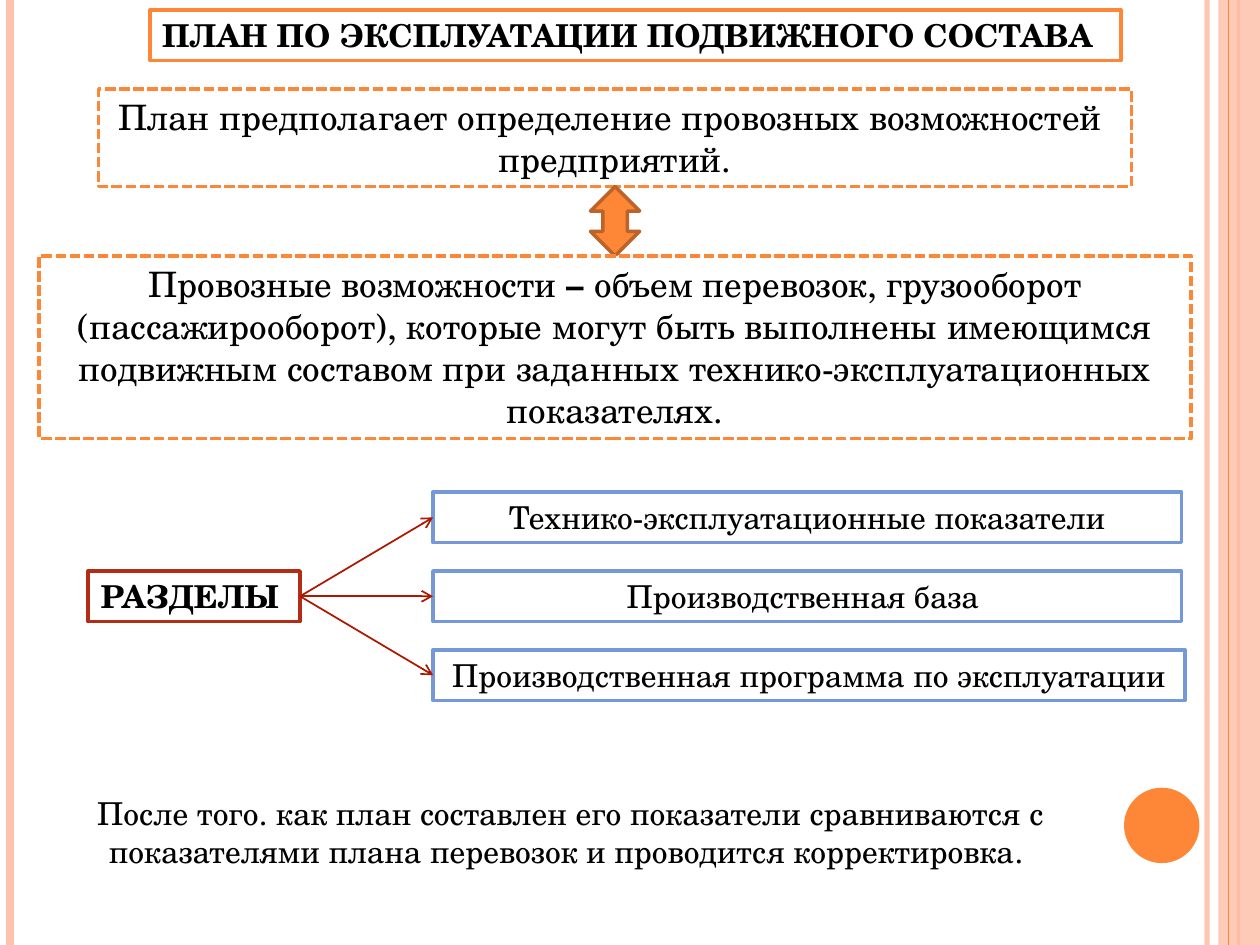
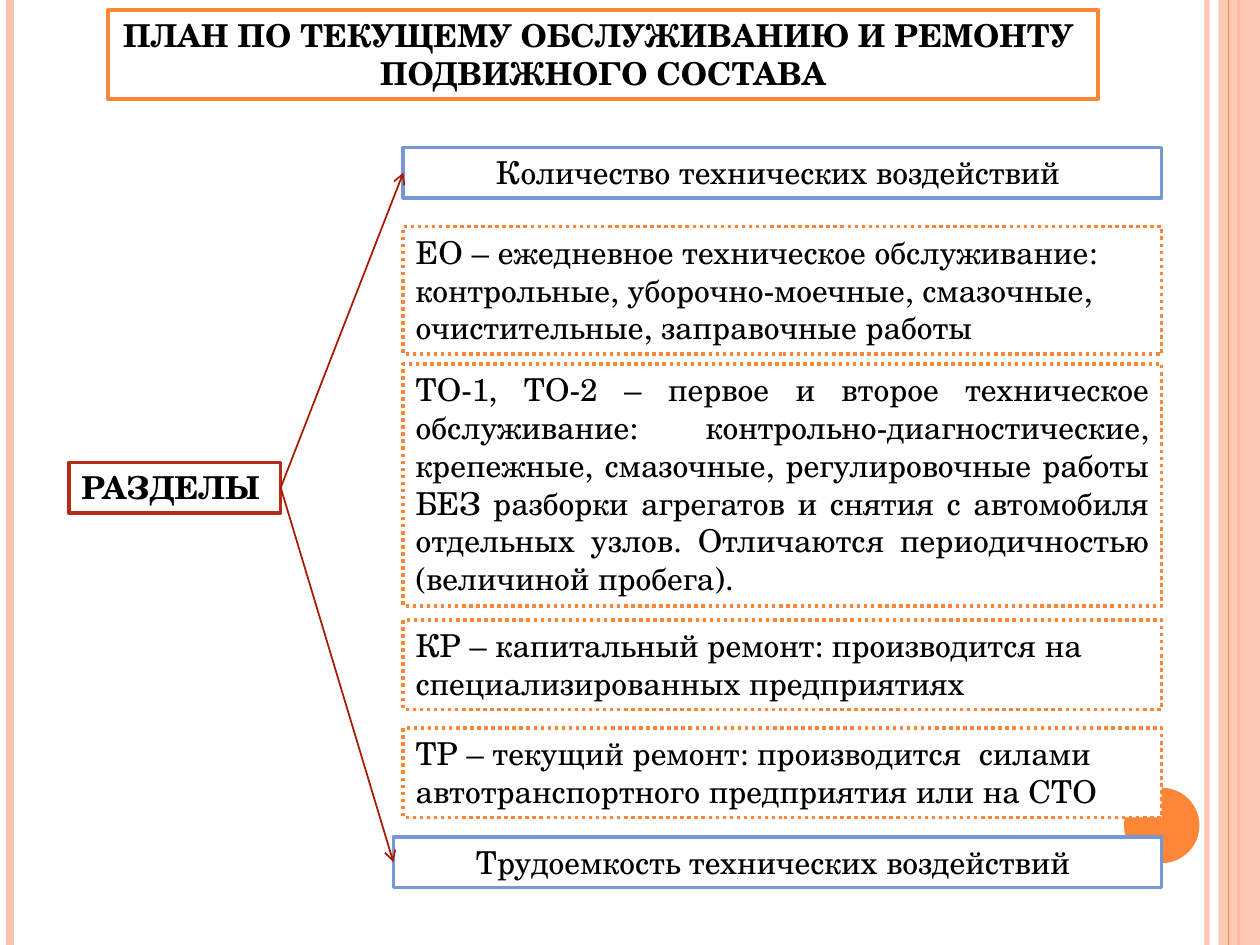
from collections import namedtuple

from lxml.etree import SubElement
from pptx import Presentation
from pptx.dml.color import RGBColor
from pptx.enum.dml import MSO_LINE
from pptx.enum.shapes import MSO_CONNECTOR, MSO_SHAPE
from pptx.enum.text import MSO_ANCHOR, PP_ALIGN
from pptx.oxml.ns import qn
from pptx.util import Cm, Pt

WHITE = RGBColor(0xFF, 0xFF, 0xFF)
BLACK = RGBColor(0x00, 0x00, 0x00)
ORANGE = RGBColor(0xFE, 0x86, 0x37)
BROWN = RGBColor(0xBC, 0x63, 0x29)
PINK = RGBColor(0xFE, 0xC3, 0xAE)
RED = RGBColor(0xB3, 0x2C, 0x16)
ARROW_RED = RGBColor(0xAC, 0x18, 0x00)
BLUE = RGBColor(0x75, 0x98, 0xD9)

FONT = "TeX Gyre Schola"
PAGE_WIDTH, PAGE_HEIGHT = 25.4, 19.05
ROW_HEIGHT = 1.02
LABEL_WIDTH = 4.27

Box = namedtuple("Box", "left top width height")


def set_opacity(properties, percent):
    color = next(properties.iter(qn("a:srgbClr")))
    SubElement(color, qn("a:alpha")).set("val", str(percent * 1000))


def write_text(frame, text, size=18, bold=False, align=PP_ALIGN.LEFT):
    frame.word_wrap = True
    frame.vertical_anchor = MSO_ANCHOR.TOP
    for index, line in enumerate(text.split("\n")):
        para = frame.paragraphs[0] if index == 0 else frame.add_paragraph()
        para.alignment = align
        for part, words in enumerate(line.split("**")):
            span = para.add_run()
            span.text = words
            span.font.name = FONT
            span.font.size = Pt(size)
            span.font.bold = bold or part % 2 == 1
            span.font.color.rgb = BLACK


def add_figure(page, box, kind=MSO_SHAPE.RECTANGLE, fill=WHITE, line=None, dash=None):
    figure = page.shapes.add_shape(kind, *map(Cm, box))
    figure.shadow.inherit = False
    figure.fill.solid()
    figure.fill.fore_color.rgb = fill
    if line is None:
        figure.line.fill.background()
    else:
        figure.line.color.rgb = line
        figure.line.width = Pt(2)
        figure.line.dash_style = dash
    return figure


def add_panel(page, box, text, line, dash=None, **text_format):
    panel = add_figure(page, box, line=line, dash=dash)
    write_text(panel.text_frame, text, **text_format)
    return panel


def add_line(page, start, end, color, width):
    line = page.shapes.add_connector(MSO_CONNECTOR.STRAIGHT, *map(Cm, start + end))
    line.line.color.rgb = color
    line.line.width = Pt(width)
    SubElement(line._element.spPr, qn("a:effectLst"))
    return line


def add_arrow(page, source, target):
    arrow = add_line(page, (0, 0), (1, 1), ARROW_RED, 1)
    arrow.begin_connect(source, 3)
    arrow.end_connect(target, 1)
    SubElement(arrow.line._get_or_add_ln(), qn("a:tailEnd")).set("type", "arrow")


def add_stripe(page, left, color, width):
    return add_line(page, (left, 0), (left, PAGE_HEIGHT), color, width)


def add_decoration(page):
    inner_stripe = add_stripe(page, 24.33, PINK, 3)
    set_opacity(inner_stripe._element.spPr, 93)
    add_stripe(page, 0.2, PINK, 4.5)
    add_stripe(page, 24.97, ORANGE, 1.5)
    band = add_figure(page, Box(24.56, 0, 0.84, PAGE_HEIGHT), fill=PINK)
    set_opacity(band._element.spPr, 87)
    add_stripe(page, 24.77, ORANGE, 0.75)
    add_figure(page, Box(22.66, 15.88, 1.52, 1.52), MSO_SHAPE.OVAL, ORANGE)


def start_page(deck, title, box, align=PP_ALIGN.CENTER):
    page = deck.slides.add_slide(deck.slide_layouts[6])
    add_decoration(page)
    add_panel(page, box, title, ORANGE, bold=True, align=align)
    return page


def add_sections(page, left, top, sections):
    label_box = Box(left, top, LABEL_WIDTH, ROW_HEIGHT)
    label = add_panel(page, label_box, "РАЗДЕЛЫ", RED, bold=True)
    for text, box in sections:
        section = add_panel(page, box, text, BLUE, align=PP_ALIGN.CENTER)
        add_arrow(page, label, section)


def add_definition(page, box):
    purpose_height, arrow_height, arrow_width = 1.96, 1.4, 0.99
    inset = 1.2
    style = {"dash": MSO_LINE.SQUARE_DOT, "size": 20, "align": PP_ALIGN.CENTER}
    add_panel(
        page,
        Box(box.left + inset, box.top, box.width - 2 * inset, purpose_height),
        "План предполагает определение провозных возможностей \nпредприятий.",
        ORANGE, **style)
    arrow_left = box.left + (box.width - arrow_width) / 2
    arrow_top = box.top + purpose_height
    add_figure(page, Box(arrow_left, arrow_top, arrow_width, arrow_height),
               MSO_SHAPE.UP_DOWN_ARROW, ORANGE, BROWN)
    top = arrow_top + arrow_height
    add_panel(
        page,
        Box(box.left, top, box.width, box.top + box.height - top),
        "Провозные возможности** – **объем перевозок, грузооборот "
        "(пассажирооборот), которые могут быть выполнены имеющимся подвижным "
        "составом при заданных технико-эксплуатационных показателях.",
        ORANGE, **style)


def add_maintenance_notes(page, left, width, notes):
    for top, height, align, text in notes:
        add_panel(page, Box(left, top, width, height), text, ORANGE,
                  dash=MSO_LINE.ROUND_DOT, align=align)


def build_operation_page(deck):
    page = start_page(deck, "ПЛАН ПО ЭКСПЛУАТАЦИИ ПОДВИЖНОГО СОСТАВА",
                      Box(3.02, 0.2, 19.58, ROW_HEIGHT), PP_ALIGN.LEFT)
    add_definition(page, Box(0.79, 1.8, 23.22, 7.04))
    names = [
        ("Технико-эксплуатационные показатели", 15.09),
        ("Производственная база ", 15.09),
        ("Производственная программа по эксплуатации", 15.16),
    ]
    add_sections(page, 1.78, 11.51, [
        (name, Box(8.73, 9.92 + 1.59 * row, width, ROW_HEIGHT))
        for row, (name, width) in enumerate(names)
    ])
    closing = page.shapes.add_textbox(*map(Cm, Box(0.99, 15.88, 21.03, 1.8)))
    write_text(
        closing.text_frame,
        "После того. как план составлен его показатели сравниваются с "
        "показателями плана перевозок и проводится корректировка. ",
        align=PP_ALIGN.CENTER)


def build_maintenance_page(deck):
    page = start_page(
        deck,
        "ПЛАН ПО ТЕКУЩЕМУ ОБСЛУЖИВАНИЮ И РЕМОНТУ \nПОДВИЖНОГО СОСТАВА",
        Box(2.18, 0.2, 19.96, 1.8))
    left, width = 8.13, 15.29
    add_sections(page, 1.39, 9.32, [
        ("Количество технических воздействий ",
         Box(left, 2.97, width, ROW_HEIGHT)),
        ("Трудоемкость технических воздействий ",
         Box(left - 0.2, 16.87, width + 0.2, ROW_HEIGHT)),
    ])
    add_maintenance_notes(page, left, width, [
        (4.57, 2.57, PP_ALIGN.LEFT,
         "ЕО – ежедневное техническое обслуживание: контрольные, "
         "уборочно-моечные, смазочные, очистительные, заправочные работы"),
        (7.34, 4.88, PP_ALIGN.JUSTIFY,
         "ТО-1, ТО-2 – первое и второе техническое обслуживание: "
         "контрольно-диагностические, крепежные, смазочные, регулировочные "
         "работы БЕЗ разборки агрегатов и снятия с автомобиля отдельных узлов. "
         "Отличаются периодичностью (величиной пробега). "),
        (12.5, 1.8, PP_ALIGN.LEFT,
         "КР – капитальный ремонт: производится на специализированных "
         "предприятиях"),
        (14.68, 1.8, PP_ALIGN.LEFT,
         "ТР – текущий ремонт: производится  силами автотранспортного "
         "предприятия или на СТО"),
    ])


def main():
    deck = Presentation()
    deck.slide_width = Cm(PAGE_WIDTH)
    deck.slide_height = Cm(PAGE_HEIGHT)
    build_operation_page(deck)
    build_maintenance_page(deck)
    deck.save("out.pptx")


if __name__ == "__main__":
    main()
